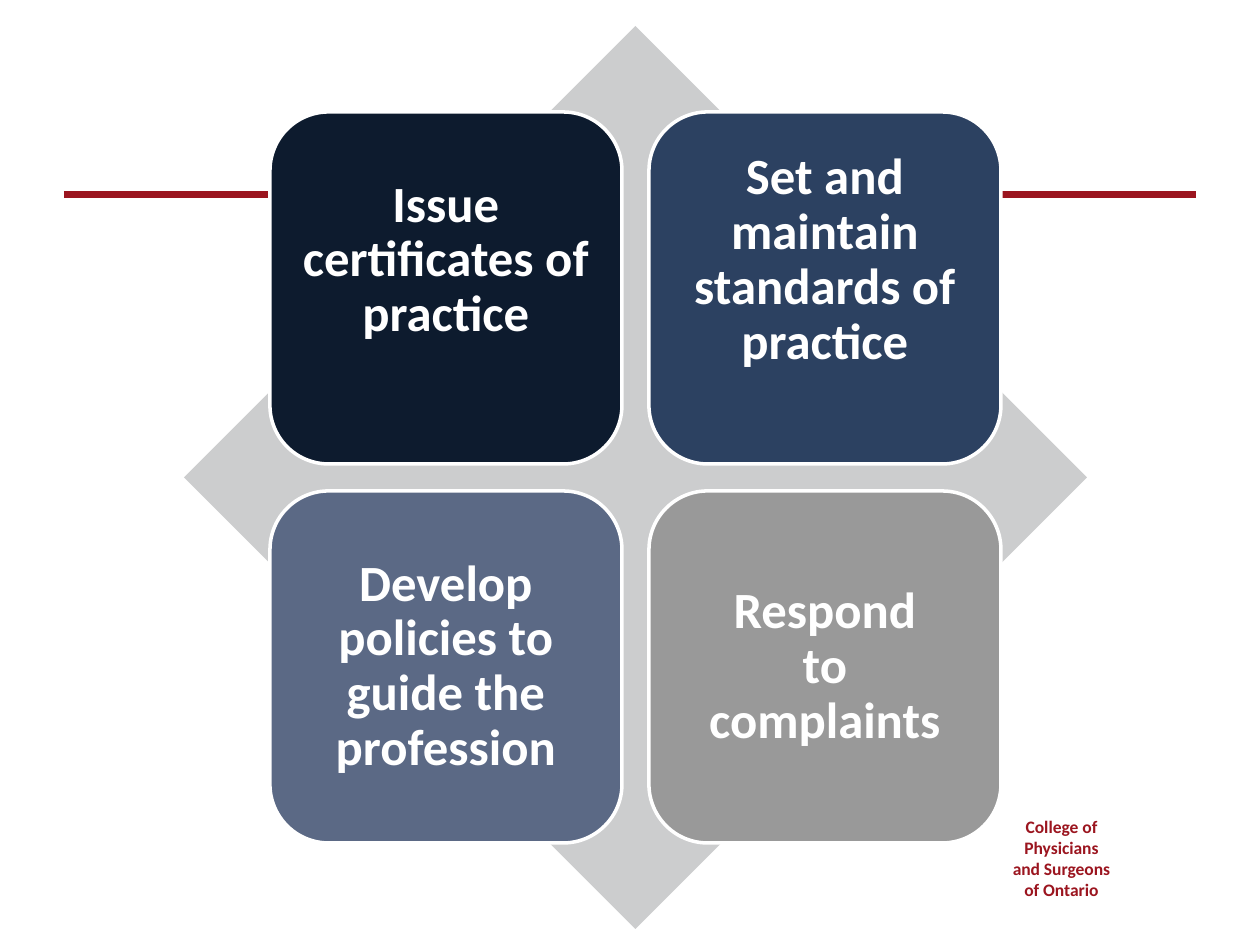
from lxml.etree import SubElement
from pptx import Presentation
from pptx.dml.color import RGBColor
from pptx.enum.shapes import MSO_CONNECTOR, MSO_SHAPE
from pptx.enum.text import MSO_ANCHOR, PP_ALIGN
from pptx.oxml.ns import qn
from pptx.util import Emu, Pt

PX_PER_INCH = 126
RED = "9B151F"
WHITE = "FFFFFF"
DIAMOND_GREY = "CCCDCE"
LINE_HEIGHT = 55
DUTIES = [
    ("Issue certificates of practice", "0D1B2E", LINE_HEIGHT),
    ("Set and maintain standards of practice", "2C4161", LINE_HEIGHT),
    ("Develop policies to guide the profession", "5B6985", 0),
    ("Respond\vto\vcomplaints", "999999", 0),
]


def px(length):
    """Turn pixels into EMU."""
    return Emu(round(length * 914400 / PX_PER_INCH))


def color(hex_string):
    """Turn a hex string into a colour."""
    return RGBColor.from_string(hex_string)


def set_margins(text_frame, left, top, right, bottom):
    """Set the four text margins in pixels."""
    text_frame.margin_left = px(left)
    text_frame.margin_top = px(top)
    text_frame.margin_right = px(right)
    text_frame.margin_bottom = px(bottom)


def write_centred(text_frame, text, size, hex_string):
    """Write one centred bold paragraph, with a line break at each vertical tab."""
    text_frame.word_wrap = True
    paragraph = text_frame.paragraphs[0]
    paragraph.alignment = PP_ALIGN.CENTER
    for index, line in enumerate(text.split("\v")):
        if index:
            paragraph.add_line_break()
        run = paragraph.add_run()
        run.text = line
        run.font.name = "Calibri"
        run.font.size = Pt(size)
        run.font.bold = True
        run.font.color.rgb = color(hex_string)
    return paragraph


def add_rule(slide, left, top, width):
    """Draw the red horizontal rule."""
    rule = slide.shapes.add_connector(
        MSO_CONNECTOR.STRAIGHT, px(left), px(top), px(left + width), px(top))
    rule.line.color.rgb = color(RED)
    rule.line.width = Pt(4)
    SubElement(rule._element.spPr, qn("a:effectLst"))


def add_college_name(slide, left, top, width, height):
    """Place the college name in the lower right corner."""
    box = slide.shapes.add_textbox(px(left), px(top), px(width), px(height))
    set_margins(box.text_frame, 13, 6, 13, 6)
    write_centred(box.text_frame, "College of Physicians and Surgeons of Ontario", 10, RED)


def add_filled_shape(slide, kind, left, top, width, height, fill):
    """Add a flat preset shape without an outline."""
    shape = slide.shapes.add_shape(kind, px(left), px(top), px(width), px(height))
    shape.shadow.inherit = False
    shape.fill.solid()
    shape.fill.fore_color.rgb = color(fill)
    shape.line.fill.background()
    return shape


def add_duty_card(slide, left, top, size, text, fill, space_below):
    """Add one rounded card with its duty."""
    card = add_filled_shape(
        slide, MSO_SHAPE.ROUNDED_RECTANGLE, left, top, size, size, fill)
    card.line.color.rgb = color(WHITE)
    card.line.width = Pt(2)
    text_frame = card.text_frame
    text_frame.vertical_anchor = MSO_ANCHOR.MIDDLE
    set_margins(text_frame, 15, 15, 15, 15 + space_below)
    paragraph = write_centred(text_frame, text, 29, WHITE)
    paragraph.line_spacing = 0.9


def add_duty_matrix(slide, left, top, size):
    """Draw the diamond and the two by two cards centred on it."""
    add_filled_shape(slide, MSO_SHAPE.DIAMOND, left, top, size, size, DIAMOND_GREY)
    card_size, gap = 352, 27
    inset = (size - 2 * card_size - gap) / 2
    for index, (text, fill, space_below) in enumerate(DUTIES):
        row, column = divmod(index, 2)
        add_duty_card(
            slide,
            left + inset + column * (card_size + gap),
            top + inset + row * (card_size + gap),
            card_size, text, fill, space_below)


def main():
    """Build and save the slide."""
    presentation = Presentation()
    presentation.slide_width = px(1260)
    presentation.slide_height = px(945)
    slide = presentation.slides.add_slide(presentation.slide_layouts[6])
    add_rule(slide, 64, 195, 1132)
    add_college_name(slide, 997, 810, 129, 97)
    add_duty_matrix(slide, 184, 26, 903)
    presentation.save("out.pptx")


if __name__ == "__main__":
    main()
